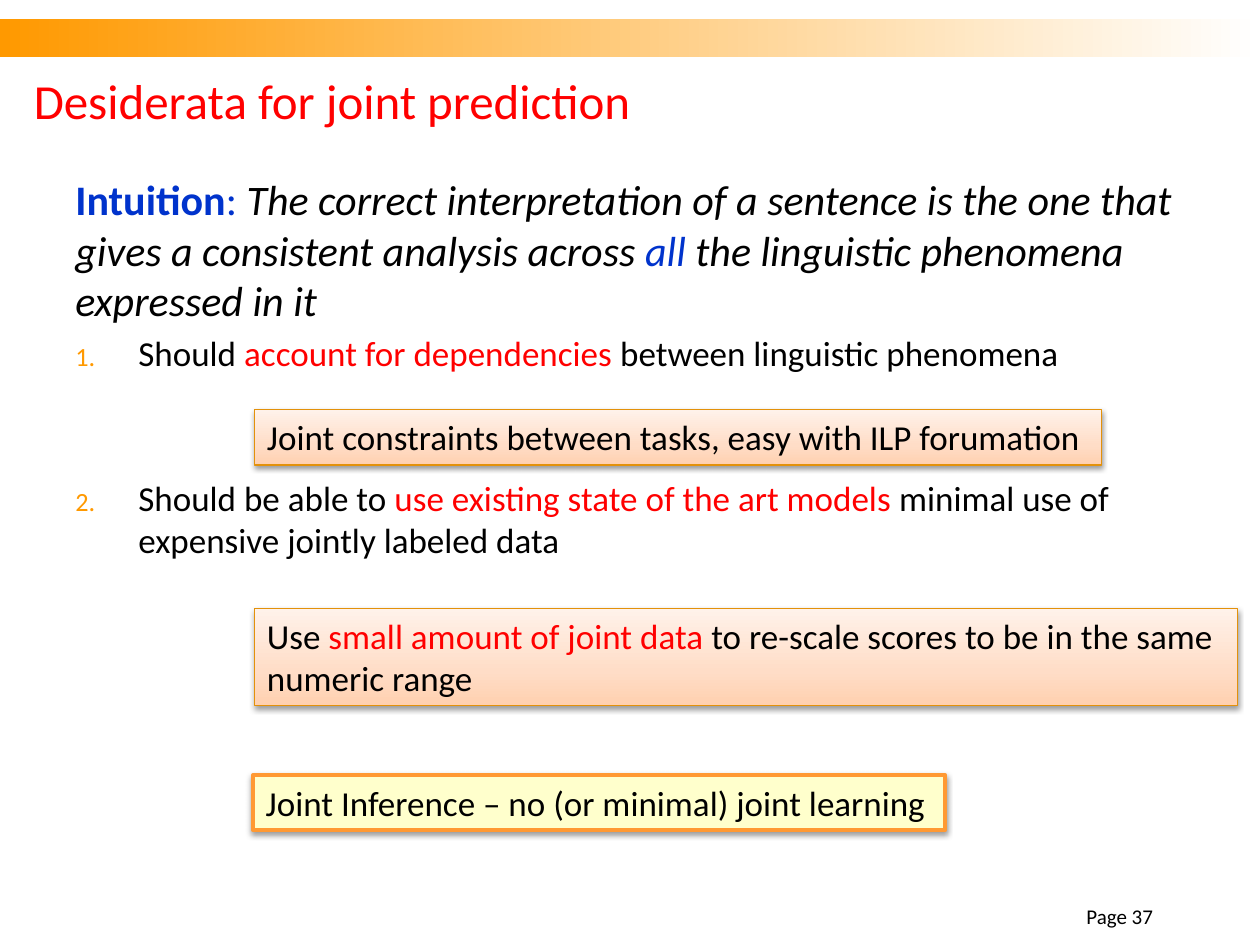
import pptx
import pptx.dml.color
import pptx.enum.shapes
import pptx.enum.text
import pptx.oxml
import pptx.oxml.ns
import pptx.util

COLUMNS, ROWS = 100, 75
BLACK, RED, BLUE, ORANGE = "000000", "FF0000", "0033CC", "FF9900"
PEACH = [(0, "FFD0AF"), (35, "FFDDC7"), (100, "FFF2EA")]


def color(value):
    return pptx.dml.color.RGBColor.from_string(value)


def add_xml(parent, markup):
    namespace = pptx.oxml.ns.nsdecls("a")
    wrapped = pptx.oxml.parse_xml(f"<a:wrap {namespace}>{markup}</a:wrap>")
    for element in list(wrapped):
        parent.append(element)


def write(paragraph, text, size=20, fill=BLACK, bold=False, italic=False, font="Calibri"):
    run = paragraph.add_run()
    run.text = text
    run.font.name = font
    run.font.size = pptx.util.Pt(size)
    run.font.bold = bold
    run.font.italic = italic
    run.font.color.rgb = color(fill)


class SlideBuilder:
    def __init__(self, presentation):
        self.slide = presentation.slides.add_slide(presentation.slide_layouts[6])
        self.column = presentation.slide_width / COLUMNS
        self.row = presentation.slide_height / ROWS

    def place(self, left, top, width, height):
        return [round(length * unit) for length, unit in
                zip((left, top, width, height), (self.column, self.row) * 2)]

    def rectangle(self, *position):
        shape = self.slide.shapes.add_shape(
            pptx.enum.shapes.MSO_SHAPE.RECTANGLE, *self.place(*position))
        shape.shadow.inherit = False
        return shape

    def gradient(self, shape, stops, angle):
        shape.fill.gradient()
        shape.fill.gradient_angle = angle
        stop_list = shape._element.spPr.find(".//" + pptx.oxml.ns.qn("a:gsLst"))
        for stop in list(stop_list):
            stop_list.remove(stop)
        for share, value in stops:
            add_xml(stop_list, f'<a:gs pos="{share * 1000}"><a:srgbClr val="{value}"/></a:gs>')

    def bar(self, *position):
        shape = self.rectangle(*position)
        self.gradient(shape, [(0, ORANGE), (100, "FFFFFF")], 0)
        shape.line.fill.background()

    def callout(self, *position, runs, fill=None, line="E3910A", weight=0.75, wrap=False):
        shape = self.rectangle(*position)
        if fill:
            shape.fill.solid()
            shape.fill.fore_color.rgb = color(fill)
        else:
            self.gradient(shape, PEACH, 90)
        shape.line.color.rgb = color(line)
        shape.line.width = pptx.util.Pt(weight)
        effects = shape._element.spPr.find(pptx.oxml.ns.qn("a:effectLst"))
        add_xml(effects, '<a:outerShdw blurRad="39400" dist="20300" dir="5400000" rotWithShape="0">'
                         '<a:srgbClr val="000000"><a:alpha val="38000"/></a:srgbClr></a:outerShdw>')
        frame = shape.text_frame
        frame.word_wrap = wrap
        frame.auto_size = pptx.enum.text.MSO_AUTO_SIZE.SHAPE_TO_FIT_TEXT
        frame.vertical_anchor = pptx.enum.text.MSO_ANCHOR.TOP
        self.paragraph(frame, runs)

    def text_box(self, *position, anchor="TOP"):
        frame = self.slide.shapes.add_textbox(*self.place(*position)).text_frame
        frame.word_wrap = True
        frame.vertical_anchor = pptx.enum.text.MSO_ANCHOR[anchor]
        return frame

    def paragraph(self, frame, runs, align="LEFT", number=None, before=None):
        paragraph = frame.add_paragraph() if frame.paragraphs[0].runs else frame.paragraphs[0]
        paragraph.alignment = pptx.enum.text.PP_ALIGN[align]
        if number:
            properties = paragraph._p.get_or_add_pPr()
            indent = pptx.util.Inches(0.5)
            properties.set("marL", str(indent))
            properties.set("indent", str(-indent))
            add_xml(properties, f'<a:buClr><a:srgbClr val="{ORANGE}"/></a:buClr>'
                                '<a:buSzPct val="75000"/>'
                                f'<a:buAutoNum type="arabicPeriod" startAt="{number}"/>')
        if before:
            paragraph.space_before = pptx.util.Pt(before)
        for text, style in runs:
            write(paragraph, text, **style)


def main():
    presentation = pptx.Presentation()
    presentation.slide_width = pptx.util.Inches(10)
    presentation.slide_height = pptx.util.Inches(7.5)
    builder = SlideBuilder(presentation)
    red = {"fill": RED}
    lead = {"size": 24, "italic": True}

    builder.bar(0, 1.5, 100, 3)
    title = builder.text_box(1.7, 5, 90, 5.8, anchor="MIDDLE")
    builder.paragraph(title, [("Desiderata for joint prediction", {"size": 28, "fill": RED})])

    body = builder.text_box(5, 13.3, 90, 54.2)
    builder.paragraph(body, [
        ("Intuition", {"size": 24, "fill": BLUE, "bold": True}),
        (": ", {"size": 24, "fill": BLUE}),
        ("The correct interpretation of a sentence is the one that "
         "gives a consistent analysis across ", lead),
        ("all ", {**lead, "fill": BLUE}),
        ("the linguistic phenomena expressed in it", lead)])
    builder.paragraph(body, [
        ("Should ", {}), ("account for dependencies ", red),
        ("between linguistic phenomena", {})], number=1, before=3.5)
    builder.paragraph(body, [
        ("Should be able to ", {}), ("use existing state of the art models ", red),
        ("minimal use of expensive jointly labeled data", {})], number=2, before=59)

    builder.callout(20.2, 32.5, 67.2, 4.4, runs=[
        ("Joint constraints between tasks, easy with ILP forumation", {})])
    builder.callout(20.2, 48.3, 78, 7.7, wrap=True, runs=[
        ("Use ", {}), ("small amount of joint data ", red),
        ("to re-scale scores to be in the same numeric range", {})])
    builder.callout(20.1, 61.5, 54.9, 4.4, fill="FFFFCC", line="FF9933", weight=2.25, runs=[
        ("Joint Inference – no (or minimal) joint learning", {})])

    footer = builder.text_box(82.5, 71.7, 10, 2.5, anchor="BOTTOM")
    builder.paragraph(footer, [("Page 37", {"size": 12})], align="RIGHT")
    presentation.save("out.pptx")


if __name__ == "__main__":
    main()
